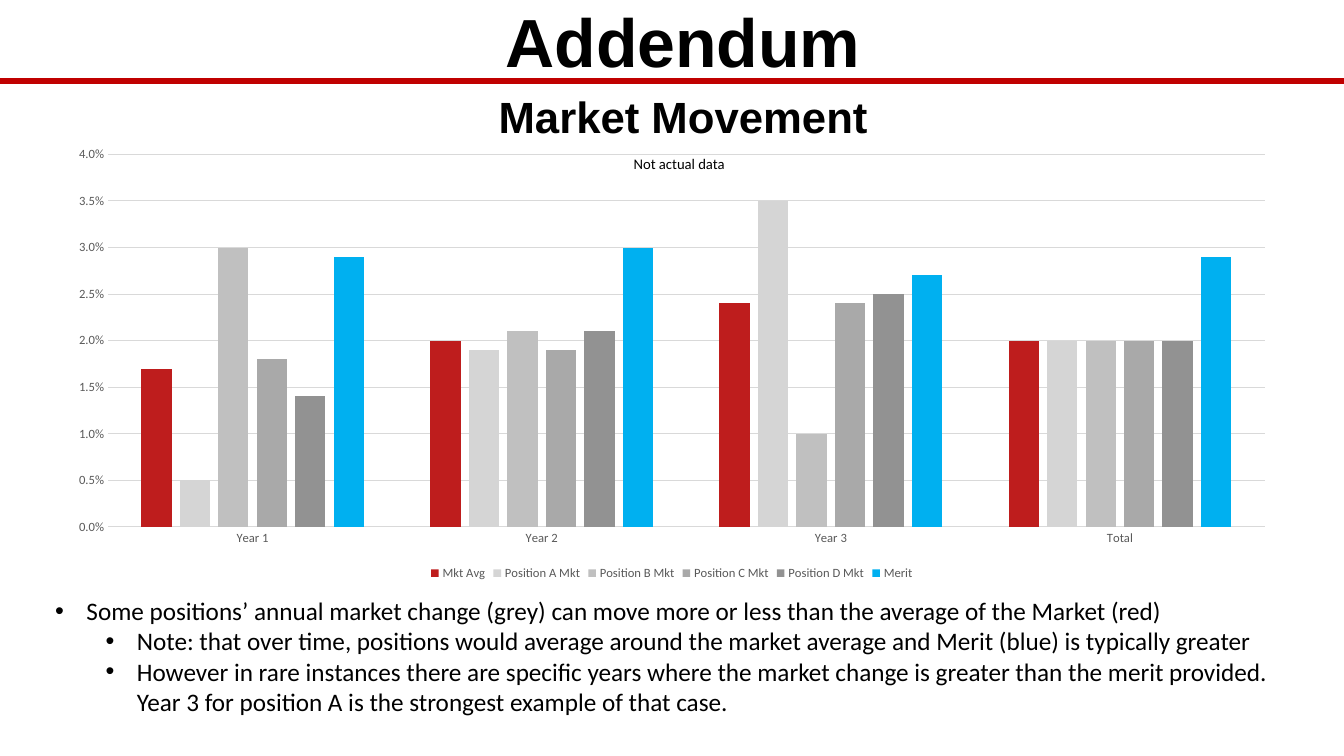
from lxml.etree import SubElement
from pptx import Presentation
from pptx.chart.data import CategoryChartData
from pptx.dml.color import RGBColor
from pptx.enum.chart import XL_CHART_TYPE as ChartType
from pptx.enum.chart import XL_LEGEND_POSITION as LegendPosition
from pptx.enum.chart import XL_TICK_MARK as TickMark
from pptx.enum.shapes import MSO_CONNECTOR as Connector
from pptx.enum.text import MSO_ANCHOR as Anchor
from pptx.enum.text import PP_ALIGN as Align
from pptx.oxml.ns import qn
from pptx.util import Cm, Pt

COLOURS = {
    "text": "000000",
    "rule": "C00000",
    "label": "595959",
    "grid": "D9D9D9",
    "Mkt Avg": "BE1D1D",
    "Position A Mkt": "D5D5D5",
    "Position B Mkt": "C0C0C0",
    "Position C Mkt": "A9A9A9",
    "Position D Mkt": "929292",
    "Merit": "00B0F0",
}

YEARS = ["Year 1", "Year 2", "Year 3", "Total"]
MOVEMENT = {
    "Mkt Avg": [0.017, 0.02, 0.024, 0.02],
    "Position A Mkt": [0.005, 0.019, 0.035, 0.02],
    "Position B Mkt": [0.03, 0.021, 0.01, 0.02],
    "Position C Mkt": [0.018, 0.019, 0.024, 0.02],
    "Position D Mkt": [0.014, 0.021, 0.025, 0.02],
    "Merit": [0.029, 0.03, 0.027, 0.029],
}

# Level and wording of each remark
REMARKS = [
    (0, "Some positions’ annual market change (grey) can move more or less "
        "than the average of the Market (red)"),
    (1, "Note: that over time, positions would average around the market "
        "average and Merit (blue) is typically greater"),
    (1, "However in rare instances there are specific years where the market "
        "change is greater than the merit provided. Year 3 for position A is "
        "the strongest example of that case."),
]

HEADING = {"name": "Arial", "bold": True}
BODY = {"name": "Calibri", "size": Pt(18)}
CAPTION = {"name": "Calibri", "size": Pt(10.5)}
LABEL = {"name": "Calibri", "size": Pt(9)}


def colour(name):
    return RGBColor.from_string(COLOURS[name])


def style_font(font, values, colour_name="text"):
    for name, value in values.items():
        setattr(font, name, value)
    font.color.rgb = colour(colour_name)


def add_box(page, left, top, width, height):
    box = page.shapes.add_textbox(Cm(left), Cm(top), Cm(width), Cm(height))
    box.text_frame.word_wrap = True
    return box.text_frame


def add_span(para, text, values):
    span = para.add_run()
    span.text = text
    style_font(span.font, values)


def add_heading(page, text, top, size):
    frame = add_box(page, 0.58, top, 33.27, 2.24)
    frame.vertical_anchor = Anchor.MIDDLE
    para = frame.paragraphs[0]
    para.alignment = Align.CENTER
    para.line_spacing = 0.9
    add_span(para, text, {**HEADING, "size": Pt(size)})


def add_rule(page, top):
    rule = page.shapes.add_connector(
        Connector.STRAIGHT, Cm(-0.05), Cm(top), Cm(33.87), Cm(top))
    rule.line.color.rgb = colour("rule")
    rule.line.width = Pt(4.5)
    SubElement(rule.element.spPr, qn("a:effectLst"))


def add_caption(page, text):
    frame = add_box(page, 15.72, 3.78, 3, 0.74)
    add_span(frame.paragraphs[0], text, CAPTION)


def add_remarks(page):
    frame = add_box(page, 1.14, 14.88, 31.34, 3.33)
    for index, (level, text) in enumerate(REMARKS):
        para = frame.add_paragraph() if index else frame.paragraphs[0]
        para.level = level
        add_span(para, text, BODY)
        # Hanging bullet
        props = para._p.get_or_add_pPr()
        props.set("marL", str(Cm(0.79 + 1.27 * level)))
        props.set("indent", str(Cm(-0.79)))
        SubElement(props, qn("a:buFont")).set("typeface", "Arial")
        SubElement(props, qn("a:buChar")).set("char", "•")


def style_line(line):
    line.color.rgb = colour("grid")
    line.width = Pt(0.75)


def add_movement_chart(page):
    data = CategoryChartData(number_format="0.0%")
    data.categories = YEARS
    for name, values in MOVEMENT.items():
        data.add_series(name, values)
    chart = page.shapes.add_chart(
        ChartType.COLUMN_CLUSTERED,
        Cm(1.37), Cm(3.48), Cm(31.12), Cm(11.25), data).chart
    chart.has_title = False
    style_font(chart.font, {**LABEL, "size": Pt(10)})

    # Columns
    plot = chart.plots[0]
    plot.gap_width = 219
    plot.overlap = -27
    plot.vary_by_categories = False
    for series in plot.series:
        series.format.fill.solid()
        series.format.fill.fore_color.rgb = colour(series.name)

    # Axes
    for axis in (chart.category_axis, chart.value_axis):
        axis.major_tick_mark = axis.minor_tick_mark = TickMark.NONE
        style_font(axis.tick_labels.font, LABEL, "label")
    style_line(chart.category_axis.format.line)
    scale = chart.value_axis
    for name, value in {"minimum_scale": 0, "maximum_scale": 0.04,
                        "major_unit": 0.005}.items():
        setattr(scale, name, value)
    scale.tick_labels.number_format = "0.0%"
    scale.tick_labels.number_format_is_linked = False
    scale.format.line.fill.background()
    style_line(scale.major_gridlines.format.line)

    # Legend
    chart.has_legend = True
    chart.legend.position = LegendPosition.BOTTOM
    chart.legend.include_in_layout = False
    style_font(chart.legend.font, LABEL, "label")


def main():
    deck = Presentation()
    deck.slide_width, deck.slide_height = Cm(33.87), Cm(19.05)
    page = deck.slides.add_slide(deck.slide_layouts[6])
    add_rule(page, 2.04)
    add_remarks(page)
    add_movement_chart(page)
    add_heading(page, "Addendum", 0.03, 48.6)
    add_heading(page, "Market Movement", 1.9, 31.2)
    add_caption(page, "Not actual data")
    deck.save("out.pptx")


if __name__ == "__main__":
    main()
